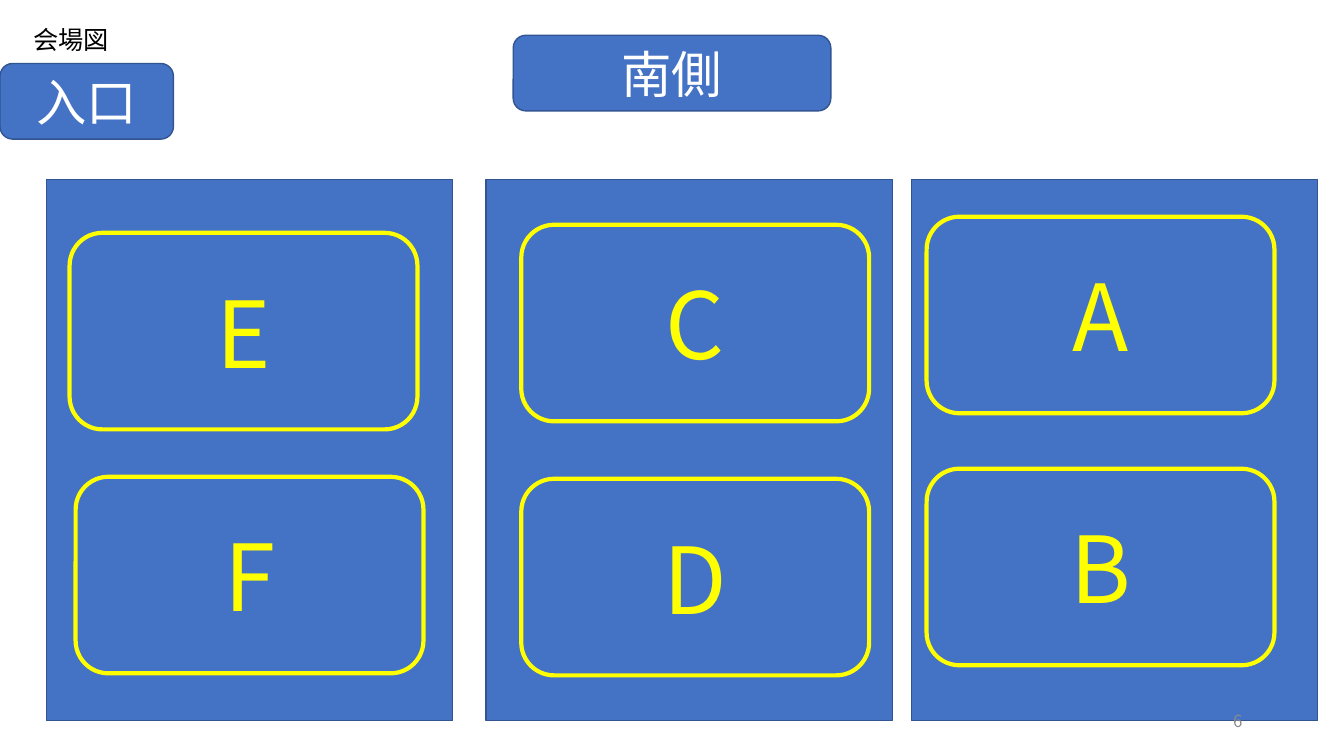
from pptx import Presentation
from pptx import util as u
from pptx.dml.color import RGBColor
from pptx.enum import shapes, text
from pptx.oxml.ns import qn
from lxml import etree

FONT = "Noto Sans CJK JP"
BLUE, EDGE, YELLOW, WHITE = "4472C4", "325491", "FFFF00", "FFFFFF"
RECT = shapes.MSO_SHAPE.RECTANGLE
ROUND = shapes.MSO_SHAPE.ROUNDED_RECTANGLE
LEFT, CENTER, RIGHT = (text.PP_ALIGN.LEFT, text.PP_ALIGN.CENTER,
                       text.PP_ALIGN.RIGHT)

# Content: halls by left edge, each with booths (name, x and y offset in hall)
HALL_TOP, HALL_SIZE = 1.78, (4.03, 5.37)
BOOTH_SIZE = (3.45, 1.95)
HALLS = [
    (9.04, [("A", 0.15, 0.37), ("B", 0.15, 2.87)]),
    (4.82, [("C", 0.35, 0.45), ("D", 0.35, 2.97)]),
    (0.46, [("E", 0.23, 0.53), ("F", 0.29, 2.95)]),
]
SIGNS = [("南側", 5.09, 0.35, 3.15), ("入口", 0, 0.63, 1.72)]
SIGN_HEIGHT = 0.75
TITLE, PAGE = "会場図", "6"

prs = Presentation()
prs.slide_width, prs.slide_height = u.Inches(13.33), u.Inches(7.5)
s = prs.slides.add_slide(prs.slide_layouts[6])


def rgb(value):
    return RGBColor.from_string(value)


def write(sp, words, size, color, align=CENTER,
          anchor=text.MSO_ANCHOR.MIDDLE):
    tf = sp.text_frame
    tf.word_wrap = True
    tf.vertical_anchor = anchor
    p = tf.paragraphs[0]
    p.text = words
    p.alignment = align
    r = p.runs[0]
    r.font.size, r.font.name = u.Pt(size), FONT
    r.font.color.rgb = rgb(color)
    # East Asian characters take their own typeface setting
    etree.SubElement(r.font._element, qn("a:ea"), typeface=FONT)


def box(kind, x, y, size, line, width):
    sp = s.shapes.add_shape(kind, *map(u.Inches, (x, y, *size)))
    sp.shadow.inherit = False
    sp.fill.solid()
    sp.fill.fore_color.rgb = rgb(BLUE)
    sp.line.color.rgb = rgb(line)
    sp.line.width = u.Pt(width)
    return sp


def label(x, y, w, h):
    return s.shapes.add_textbox(*map(u.Inches, (x, y, w, h)))


# Title
title = label(0.23, 0.19, 1.34, 0.4)
write(title, TITLE, 18, "000000", LEFT, text.MSO_ANCHOR.TOP)
title.text_frame.auto_size = text.MSO_AUTO_SIZE.SHAPE_TO_FIT_TEXT

# Halls and their booths
for hall_x, booths in HALLS:
    box(RECT, hall_x, HALL_TOP, HALL_SIZE, EDGE, 1)
    for name, dx, dy in booths:
        booth = box(ROUND, hall_x + dx, HALL_TOP + dy, BOOTH_SIZE, YELLOW, 3)
        write(booth, name, 66, YELLOW)

# Signs
for words, x, y, w in SIGNS:
    write(box(ROUND, x, y, (w, SIGN_HEIGHT), EDGE, 1), words, 36, WHITE)

# Page number
write(label(9.42, 6.95, 3, 0.4), PAGE, 12, "8C8C8C", RIGHT)

prs.save("out.pptx")
